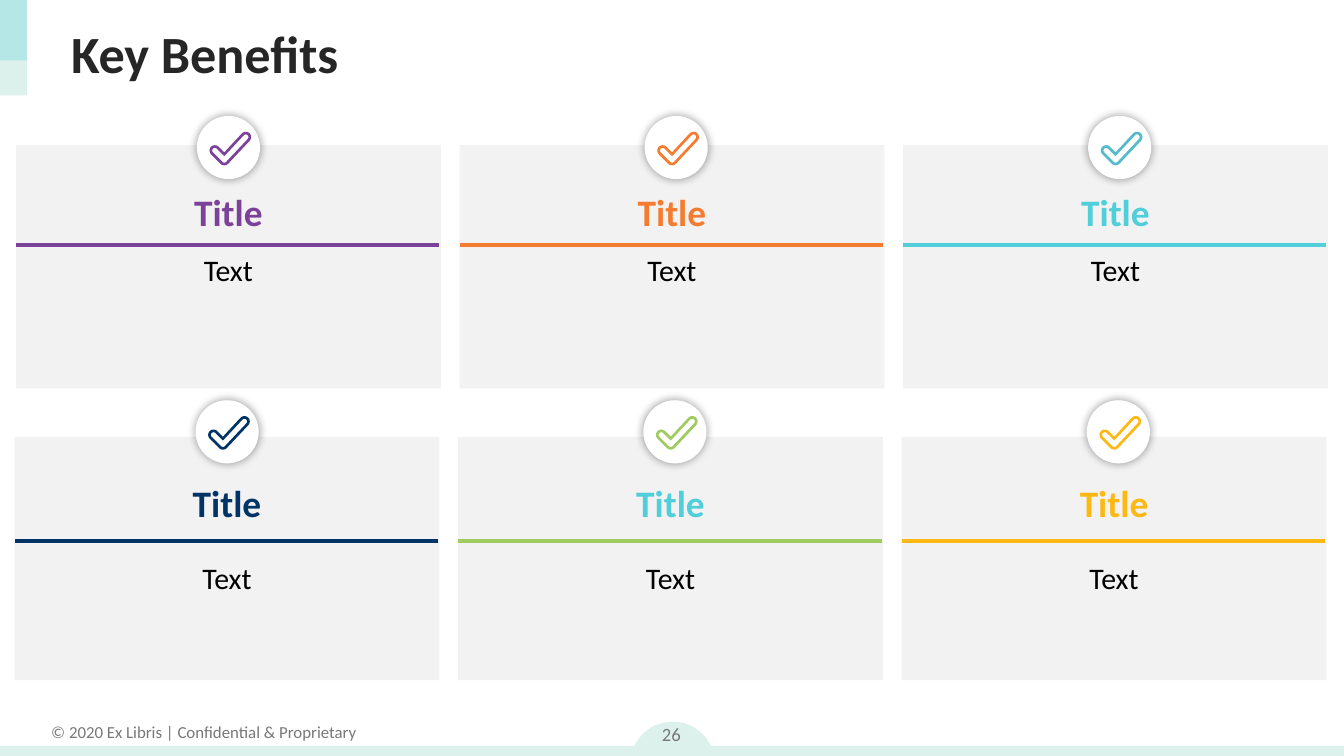
from collections import namedtuple
from math import cos, radians, sin, sqrt

from lxml import etree
from pptx import Presentation
from pptx.dml.color import RGBColor
from pptx.enum.shapes import MSO_CONNECTOR, MSO_SHAPE
from pptx.enum.text import MSO_ANCHOR, MSO_AUTO_SIZE, PP_ALIGN
from pptx.oxml.ns import qn
from pptx.util import Inches, Pt

RECT, OVAL, CARD = MSO_SHAPE.RECTANGLE, MSO_SHAPE.OVAL, MSO_SHAPE.ROUND_2_SAME_RECTANGLE
STRAIGHT = MSO_CONNECTOR.STRAIGHT
TOP, MIDDLE, BOTTOM = MSO_ANCHOR.TOP, MSO_ANCHOR.MIDDLE, MSO_ANCHOR.BOTTOM
LEFT, CENTER = PP_ALIGN.LEFT, PP_ALIGN.CENTER

Box = namedtuple("Box", "left top width height")
# Heights of a card's parts as shares of the card's height
Row = namedtuple("Row", "left top badge title rule text")
Benefit = namedtuple("Benefit", "title_color rule_color check_color")

SLIDE = Box(0, 0, 10, 5.625)
MINT, AQUA, GREY, PANEL = "DCF1EC", "50CFDA", "787878", "F2F2F2"
CARD_WIDTH, CARD_HEIGHT, COLUMN_STEP = 3.16, 1.81, 3.3
BADGE_SIZE = 0.47
BADGE_CENTERS = (0.5, 0.51, 0.51)
CARD_INSETS = (0.04, 0.05)

ROWS = (
    Row(0.12, 1.08, badge=-0.12, title=0.22, rule=0.41, text=0.41),
    Row(0.11, 3.25, badge=-0.15, title=0.22, rule=0.43, text=0.48),
)
BENEFITS = (
    (Benefit("7C4299", "7C4299", "7C4299"),
     Benefit("F47C30", "F47C30", "F47C30"),
     Benefit(AQUA, AQUA, "53B9CD")),
    (Benefit("003466", "003466", "003466"),
     Benefit(AQUA, "A0CB61", "A0CB61"),
     Benefit("FDB813", "FDB813", "FDB813")),
)


def rgb(color):
    return RGBColor.from_string(color)


def inches(box):
    return [Inches(length) for length in box]


def paint(shape, color, alpha=None):
    """Give a shape a plain fill with no line and no shadow."""
    shape.shadow.inherit = False
    shape.fill.solid()
    shape.fill.fore_color.rgb = rgb(color)
    shape.line.fill.background()
    if alpha is not None:
        srgb = shape.fill._xPr.find(".//" + qn("a:srgbClr"))
        etree.SubElement(srgb, qn("a:alpha"), val=str(alpha * 1000))
    return shape


def add_block(slide, kind, box, color, alpha=None):
    return paint(slide.shapes.add_shape(kind, *inches(box)), color, alpha)


def add_text(slide, box, text, size, color, bold=False, align=CENTER,
             anchor=TOP, insets=(0.1, 0.05), wrap=True):
    frame = slide.shapes.add_textbox(*inches(box)).text_frame
    frame.word_wrap = wrap
    frame.auto_size = MSO_AUTO_SIZE.NONE if wrap else MSO_AUTO_SIZE.SHAPE_TO_FIT_TEXT
    frame.vertical_anchor = anchor
    frame.margin_left = frame.margin_right = Inches(insets[0])
    frame.margin_top = frame.margin_bottom = Inches(insets[1])
    paragraph = frame.paragraphs[0]
    paragraph.alignment = align
    run = paragraph.add_run()
    run.text = text
    run.font.name = "Calibri"
    run.font.size = Pt(size)
    run.font.bold = bold
    run.font.color.rgb = rgb(color)


def add_rule(slide, left, right, y, color):
    rule = slide.shapes.add_connector(
        STRAIGHT, Inches(left), Inches(y), Inches(right), Inches(y))
    rule.line.color.rgb = rgb(color)
    rule.line.width = Pt(2.25)
    etree.SubElement(rule._element.spPr, qn("a:effectLst"))


def add_glow(shape):
    """Put a soft grey shadow all around a shape."""
    effects = shape._element.spPr.find(qn("a:effectLst"))
    shadow = etree.SubElement(effects, qn("a:outerShdw"), blurRad=str(Pt(5)),
                              dist="0", algn="ctr", rotWithShape="0")
    black = etree.SubElement(shadow, qn("a:srgbClr"), val="000000")
    etree.SubElement(black, qn("a:alpha"), val="40000")


def check_contour(box, radius):
    """Trace a round-ended check mark at a distance from its centre line."""
    tail = (box.left + 0.04, box.top + 0.14)
    elbow = (box.left + 0.11, box.top + 0.21)
    tip = (box.left + 0.27, box.top + 0.04)

    def arc(center, start, end):
        return [(center[0] + radius * cos(radians(angle)),
                 center[1] + radius * sin(radians(angle)))
                for angle in range(start, end + 1, 15)]

    inner_corner = (elbow[0], elbow[1] - radius * sqrt(2))
    points = arc(tail, 135, 315) + [inner_corner] + arc(tip, 225, 405) + arc(elbow, 45, 135)
    return [(Inches(x), Inches(y)) for x, y in points]


def add_check(slide, box, color):
    outer, inner = (check_contour(box, radius) for radius in (0.04, 0.02))
    builder = slide.shapes.build_freeform(*outer[0])
    builder.add_line_segments(outer[1:], close=True)
    builder.move_to(*inner[0])
    builder.add_line_segments(inner[1:], close=True)
    paint(builder.convert_to_shape(), color)


def add_badge(slide, box, color):
    add_glow(add_block(slide, OVAL, box, "FFFFFF"))
    check = Box(box.left + 0.2 * box.width, box.top + 0.25 * box.height, 0.31, 0.25)
    add_check(slide, check, color)


def add_card(slide, box, row, badge_center, benefit):
    def down(share):
        return box.top + share * box.height

    panel = add_block(slide, CARD, box, PANEL)
    panel.adjustments[0] = panel.adjustments[1] = 0
    add_text(slide, Box(box.left, down(row.text), box.width, 0.64), "Text",
             16, "000000", insets=CARD_INSETS)
    add_text(slide, Box(box.left, down(row.title), box.width, 0.31), "Title",
             20, benefit.title_color, bold=True, anchor=BOTTOM, insets=CARD_INSETS)
    badge_left = box.left + badge_center * box.width - BADGE_SIZE / 2
    add_badge(slide, Box(badge_left, down(row.badge), BADGE_SIZE, BADGE_SIZE),
              benefit.check_color)
    add_rule(slide, box.left, box.left + box.width - 0.01, down(row.rule),
             benefit.rule_color)


def add_header(slide, box):
    tab = Box(box.left, box.top, 0.02 * box.width, box.height)
    add_block(slide, RECT, tab, MINT)
    add_block(slide, RECT, tab._replace(height=0.45), AQUA, alpha=27)
    add_text(slide, Box(box.left + 0.43, box.top + 0.08, 9.21, 0.63), "Key Benefits",
             28, "262626", bold=True, align=LEFT, anchor=MIDDLE)


def add_footer(slide, box):
    middle = box.left + box.width / 2
    add_block(slide, OVAL, Box(middle - 0.31, box.top + 0.11, 0.63, 0.63), MINT)
    add_text(slide, Box(box.left + 0.27, box.top + 0.06, 2.49, 0.25),
             "© 2020 Ex Libris | Confidential & Proprietary", 9, GREY, wrap=False)
    add_block(slide, RECT, Box(box.left, box.top + 0.29, box.width, 0.11), MINT)
    add_text(slide, Box(middle - 0.3, box.top, 0.59, 0.4), "26", 10, GREY, anchor=MIDDLE)


def main():
    deck = Presentation()
    deck.slide_width, deck.slide_height = inches(SLIDE[2:])
    slide = deck.slides.add_slide(deck.slide_layouts[6])
    add_footer(slide, Box(0, 5.26, SLIDE.width, 0.36))
    add_header(slide, Box(0, 0, SLIDE.width, 0.71))
    for row, benefits in zip(ROWS, BENEFITS):
        for column, benefit in enumerate(benefits):
            card = Box(row.left + column * COLUMN_STEP, row.top, CARD_WIDTH, CARD_HEIGHT)
            add_card(slide, card, row, BADGE_CENTERS[column], benefit)
    deck.save("out.pptx")


if __name__ == "__main__":
    main()
